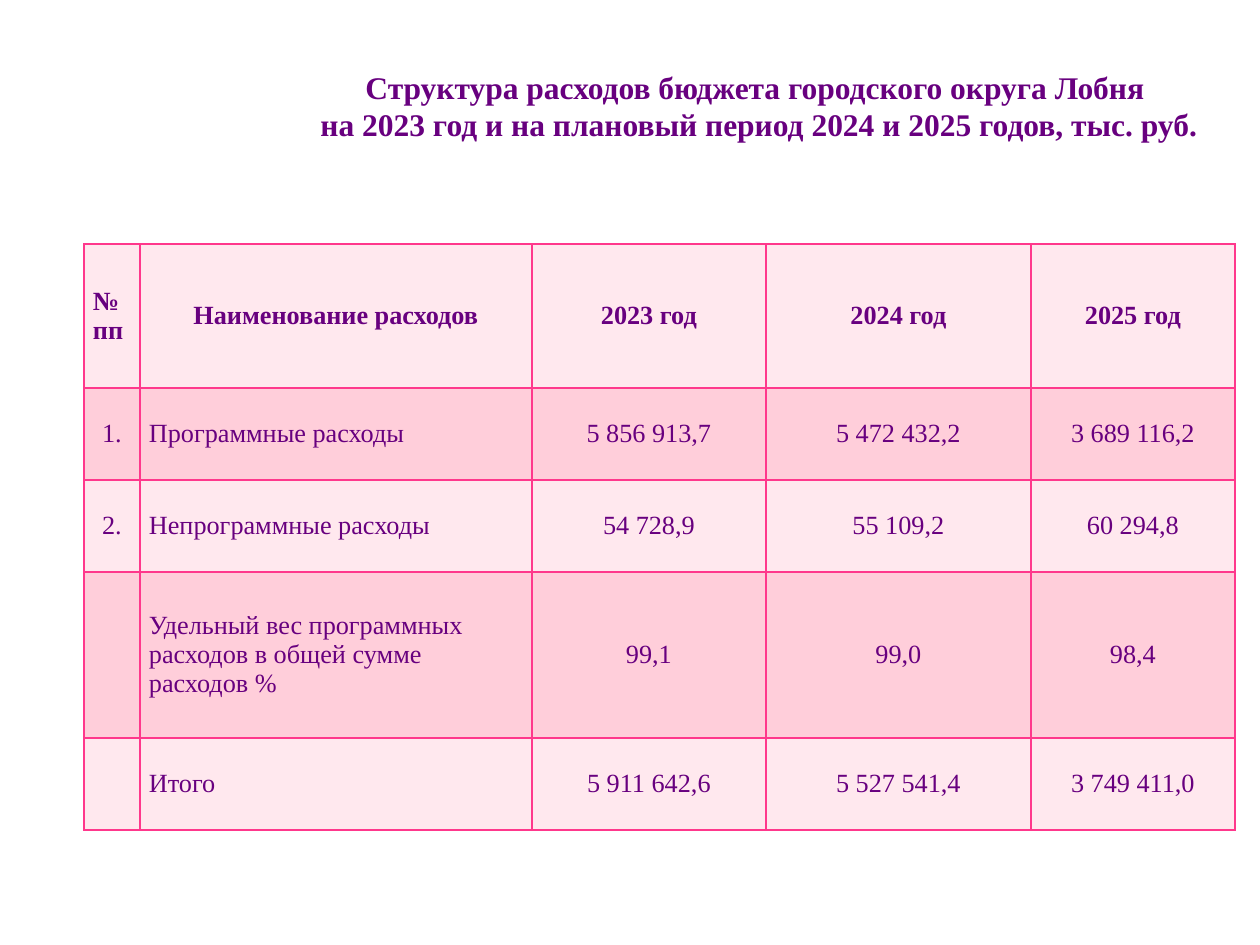
"""Builds the slide on the structure of budget expenditure for 2023-2025."""
from dataclasses import dataclass

from lxml import etree
from pptx import Presentation
from pptx.dml.color import RGBColor
from pptx.enum.text import MSO_ANCHOR, PP_ALIGN
from pptx.oxml.ns import qn
from pptx.util import Emu, Pt

LEFT, CENTER = PP_ALIGN.LEFT, PP_ALIGN.CENTER
MIDDLE = MSO_ANCHOR.MIDDLE
PX_PER_INCH = 126


@dataclass(frozen=True)
class Theme:
    font: str = "Times New Roman"
    text: str = "68007F"
    border: str = "FF388C"
    bands: tuple = ("FFE8EE", "FFCEDA")
    title_size: int = 18
    table_size: int = 15
    border_width: int = 1


theme = Theme()


def px(n):
    return Emu(round(n * 914400 / PX_PER_INCH))


def format_runs(p, size, bold, align):
    p.alignment = align
    for r in p.runs:
        r.font.name = theme.font
        r.font.size = Pt(size)
        r.font.bold = bold
        r.font.color.rgb = RGBColor.from_string(theme.text)


prs = Presentation()
prs.slide_width, prs.slide_height = px(1260), px(945)
s = prs.slides.add_slide(prs.slide_layouts[5])

title = s.shapes.title
title.left, title.top, title.width, title.height = px(263), px(26), px(992), px(159)
tf = title.text_frame
tf.word_wrap = True
tf.vertical_anchor = MIDDLE
p = tf.paragraphs[0]
p.text = (
    "Структура расходов бюджета городского округа Лобня \v"
    "на 2023 год и на плановый период 2024 и 2025 годов, тыс. руб."
)
format_runs(p, theme.title_size, True, CENTER)
for br in p._p.findall(qn("a:br")):
    etree.SubElement(br, qn("a:rPr"), sz=str(theme.title_size * 100))

rows = [
    ["№ пп", "Наименование расходов", "2023 год", "2024 год", "2025 год"],
    ["1.", "Программные расходы", "5 856 913,7", "5 472 432,2", "3 689 116,2"],
    ["2.", "Непрограммные расходы", "54 728,9", "55 109,2", "60 294,8"],
    ["", "Удельный вес программных расходов в общей сумме расходов %", "99,1", "99,0", "98,4"],
    ["", "Итого", "5 911 642,6", "5 527 541,4", "3 749 411,0"],
]
col_widths = [56, 392, 234, 265, 204]
row_heights = [144, 92, 92, 166, 92]

frame = s.shapes.add_table(
    len(rows), len(col_widths), px(84), px(244), px(sum(col_widths)), px(sum(row_heights))
)
table = frame.table
table.first_row = False
table.horz_banding = False
for col, width in zip(table.columns, col_widths):
    col.width = px(width)
for row, height in zip(table.rows, row_heights):
    row.height = px(height)

for i, values in enumerate(rows):
    for j, value in enumerate(values):
        cell = table.cell(i, j)
        cell.vertical_anchor = MIDDLE
        cell.margin_left = cell.margin_right = px(9)
        cell.margin_top = cell.margin_bottom = px(6)
        p = cell.text_frame.paragraphs[0]
        p.text = value
        align = LEFT if (i == 0 and j == 0) or (i > 0 and j == 1) else CENTER
        format_runs(p, theme.table_size, i == 0, align)
        tcPr = cell._tc.get_or_add_tcPr()
        for side in ("lnL", "lnR", "lnT", "lnB"):
            ln = etree.SubElement(tcPr, qn(f"a:{side}"), w=str(Pt(theme.border_width)))
            fill = etree.SubElement(ln, qn("a:solidFill"))
            etree.SubElement(fill, qn("a:srgbClr"), val=theme.border)
        cell.fill.solid()
        cell.fill.fore_color.rgb = RGBColor.from_string(theme.bands[i % 2])

prs.save("out.pptx")
